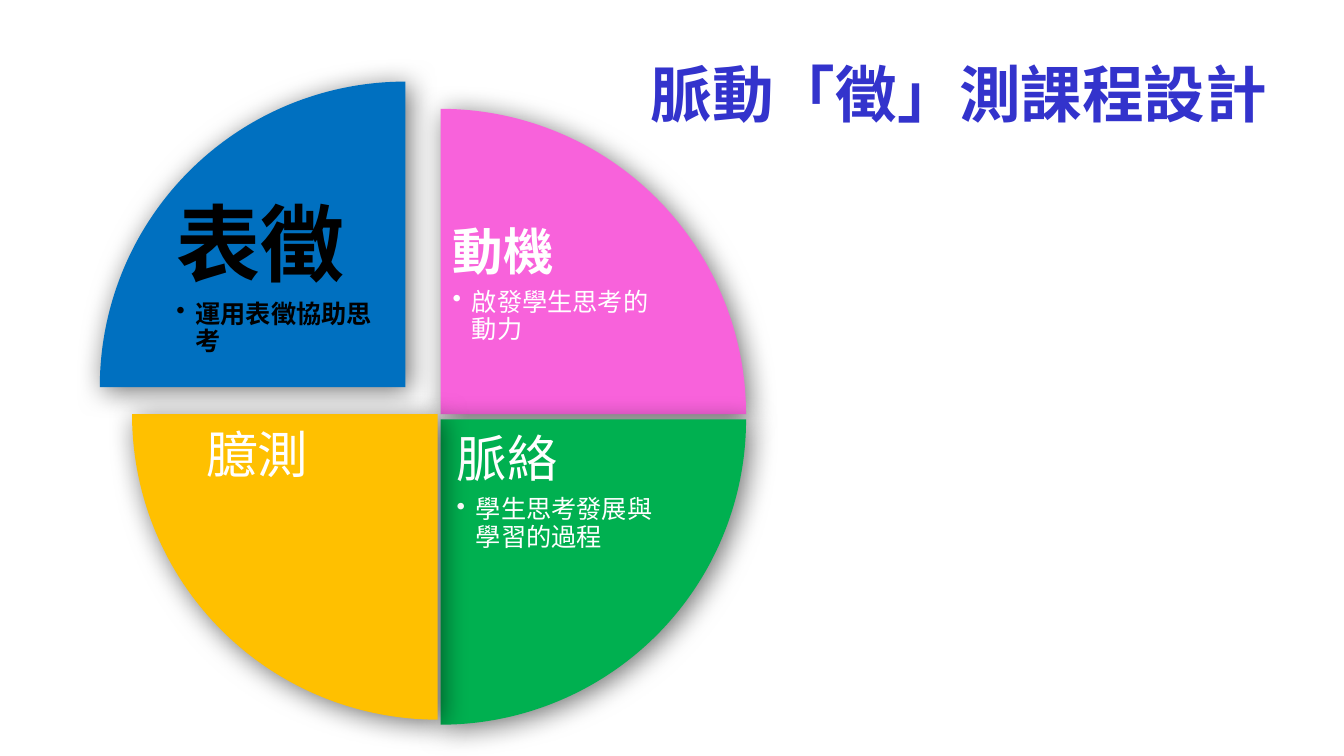
"""Build the four-quadrant course design slide."""
from dataclasses import dataclass

from lxml.etree import SubElement
from pptx import Presentation
from pptx.dml.color import RGBColor
from pptx.enum.shapes import MSO_SHAPE as Shape
from pptx.enum.text import MSO_ANCHOR as Anchor, PP_ALIGN as Align
from pptx.oxml.ns import qn
from pptx.util import Inches, Pt

PINK = RGBColor(0xF8, 0x62, 0xDB)
GREEN = RGBColor(0x00, 0xB0, 0x50)
AMBER = RGBColor(0xFF, 0xC0, 0x00)
BLUE = RGBColor(0x00, 0x70, 0xC0)
INDIGO = RGBColor(0x33, 0x33, 0xCC)
WHITE = RGBColor(0xFF, 0xFF, 0xFF)
BLACK = RGBColor(0x00, 0x00, 0x00)

SC = "Noto Sans CJK SC"
TC = "Noto Sans CJK TC"
DIAMETER = 6.06
QUARTER = 54


@dataclass
class Quadrant:
    left: float
    top: float
    start: int
    fill: RGBColor
    label_left: float
    label_top: float
    heading: str
    detail: str = ""
    color: RGBColor = WHITE
    face: str = SC
    size: int = 36
    heading_bold: bool = False
    detail_bold: bool = False
    inset: float = 0.05


QUADRANTS = [
    Quadrant(1.34, 1.08, 162, PINK, 4.44, 2.2, "動機", "啟發學生思考的動力",
             heading_bold=True),
    Quadrant(1.34, 1.13, 0, GREEN, 4.48, 4.26, "脈絡", "學生思考發展與學習的過程"),
    Quadrant(1.31, 1.08, 54, AMBER, 2, 4.22, "臆測", face="League Spartan"),
    Quadrant(0.99, 0.81, 108, BLUE, 1.67, 1.93, "表徵", "運用表徵協助思考",
             color=BLACK, size=60, heading_bold=True, detail_bold=True, inset=0.08),
]
TITLE = [("脈動", SC), ("「", TC), ("徵", SC), ("」", TC), ("測課程設計", SC)]


def set_face(font, face: str) -> None:
    font.name = face
    SubElement(font._element if hasattr(font, "_element") else font._rPr,
               qn("a:ea"), typeface=face)


def style(paragraph, size: int, color: RGBColor, bold: bool) -> None:
    font = paragraph.font
    font.size, font.bold = Pt(size), bold
    font.color.rgb = color


def add_soft_shadow(shape) -> None:
    shape.shadow.inherit = False
    effects = shape._element.spPr.find(qn("a:effectLst"))
    shadow = SubElement(effects, qn("a:outerShdw"), blurRad=str(Pt(20)),
                        dist=str(Pt(4)), dir=str(45 * 60000),
                        algn="tl", rotWithShape="0")
    black = SubElement(shadow, qn("a:srgbClr"), val=str(BLACK))
    SubElement(black, qn("a:alpha"), val="55000")


def add_bullet(paragraph) -> None:
    properties = paragraph._p.get_or_add_pPr()
    properties.set("marL", str(Inches(0.19)))
    properties.set("indent", str(Inches(-0.19)))
    SubElement(properties, qn("a:buChar"), char="•")


def draw_sector(slide, quadrant: Quadrant) -> None:
    sector = slide.shapes.add_shape(
        Shape.PIE, Inches(quadrant.left), Inches(quadrant.top),
        Inches(DIAMETER), Inches(DIAMETER))
    sector.adjustments[0] = quadrant.start
    sector.adjustments[1] = (quadrant.start + QUARTER) % (4 * QUARTER)
    sector.fill.solid()
    sector.fill.fore_color.rgb = quadrant.fill
    sector.line.fill.background()
    add_soft_shadow(sector)


def draw_label(slide, quadrant: Quadrant) -> None:
    frame = slide.shapes.add_textbox(
        Inches(quadrant.label_left), Inches(quadrant.label_top),
        Inches(2.24), Inches(1.8)).text_frame
    frame.word_wrap = True
    frame.margin_left = frame.margin_right = Inches(quadrant.inset)
    frame.margin_top = frame.margin_bottom = Inches(quadrant.inset)
    heading = frame.paragraphs[0]
    heading.text = quadrant.heading
    heading.line_spacing, heading.space_after = 0.9, Pt(6)
    style(heading, quadrant.size, quadrant.color, quadrant.heading_bold)
    set_face(heading.font, quadrant.face)
    if quadrant.detail:
        detail = frame.add_paragraph()
        detail.text, detail.level = quadrant.detail, 1
        detail.line_spacing = 0.9
        add_bullet(detail)
        style(detail, 18, quadrant.color, quadrant.detail_bold)
        set_face(detail.font, quadrant.face)


def write_title(slide) -> None:
    title = slide.shapes.title
    title.left, title.top = Inches(0.67), Inches(0.3)
    title.width, title.height = Inches(12), Inches(1.25)
    title.text_frame.vertical_anchor = Anchor.MIDDLE
    paragraph = title.text_frame.paragraphs[0]
    paragraph.alignment = Align.RIGHT
    style(paragraph, 44, INDIGO, True)
    for text, face in TITLE:
        run = paragraph.add_run()
        run.text = text
        set_face(run.font, face)


def main() -> None:
    deck = Presentation()
    deck.slide_width, deck.slide_height = Inches(13.33), Inches(7.5)
    slide = deck.slides.add_slide(deck.slide_layouts[5])
    for quadrant in QUADRANTS:
        draw_sector(slide, quadrant)
        draw_label(slide, quadrant)
    write_title(slide)
    deck.save("out.pptx")


if __name__ == "__main__":
    main()
